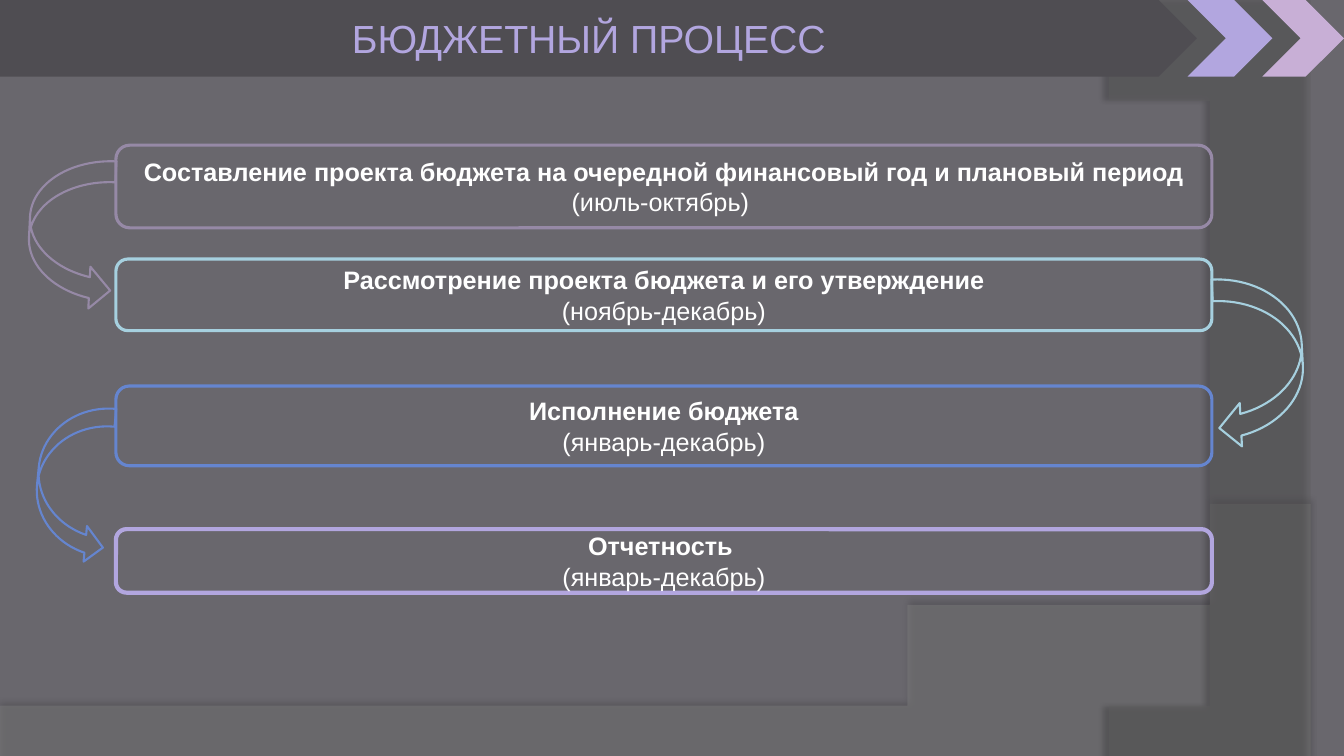
"""Build the budget process slide."""
from dataclasses import dataclass

from lxml import etree
from pptx import Presentation
from pptx import util as u
from pptx.dml.color import RGBColor
from pptx.enum import shapes, text
from pptx.oxml.ns import qn

MSO = shapes.MSO_SHAPE
Point = tuple[float, float]


@dataclass(frozen=True)
class Theme:
    font: str = "Arial"
    title_pt: float = 28
    body_pt: float = 18
    arrow_pt: float = 1.5
    white: str = "FFFFFF"
    background: str = "69676D"
    banner: str = "4F4D52"
    mauve: str = "9689A6"
    aqua: str = "A6D0DF"
    blue: str = "6585CF"
    lilac: str = "B2A6DF"
    pink: str = "C8AFD6"
    wave: str = "7F7F7F"
    edge: str = "5E5E5E"


@dataclass(frozen=True)
class Stage:
    top: float
    height: float
    color: str
    name: str
    months: str
    line_pt: float = 2.25


@dataclass(frozen=True)
class Shape:
    kind: MSO
    box: tuple[float, float, float, float]
    color: str
    rotation: float = 0


@dataclass(frozen=True)
class Backdrop:
    corners: tuple[Point, ...]
    curve: tuple[Point, Point, Point, Point]
    color: str
    opacity: int
    shadow_opacity: int
    shadow_pt: float
    shadow_angle: int


T = Theme()
W, H = 13.33, 7.5
STAGE_LEFT, STAGE_WIDTH = 1.15, 10.87
BANNER_HEIGHT = 0.76

BACKDROPS = (
    Backdrop(((0, H), (W, H)),
             ((W, 5.2), (7.45, 7.29), (5.21, 7.19), (0, 7.05)),
             T.wave, 45, 35, 3.5, 270),
    Backdrop(((W, 0), (W, H)),
             ((10.95, H), (12.46, 6.19), (13.57, 3), (10.67, 0)),
             T.edge, 40, 45, 4, 180),
)
STAGES = (
    Stage(1.44, 0.82, T.mauve,
          "Составление проекта бюджета на очередной финансовый год и плановый период",
          "(июль-октябрь) "),
    Stage(2.57, 0.71, T.aqua, "Рассмотрение проекта бюджета и его утверждение",
          "(ноябрь-декабрь)"),
    Stage(3.83, 0.79, T.blue, "Исполнение бюджета", "(январь-декабрь)"),
    Stage(5.25, 0.63, T.lilac, "Отчетность ", "(январь-декабрь)", 3),
)
ARROWS = (
    Shape(MSO.CURVED_RIGHT_ARROW, (0.29, 1.58, 0.83, 1.49), T.mauve, 2.8),
    Shape(MSO.CURVED_LEFT_ARROW, (12.06, 2.75, 0.86, 1.69), T.aqua, 357),
    Shape(MSO.CURVED_RIGHT_ARROW, (0.37, 4.02, 0.71, 1.56), T.blue, 5.5),
)
BANNER = (
    Shape(MSO.PENTAGON, (0, 0, 11.87, BANNER_HEIGHT), T.banner),
    Shape(MSO.CHEVRON, (11.78, 0, 0.84, BANNER_HEIGHT), T.lilac),
    Shape(MSO.CHEVRON, (12.52, 0, 0.81, BANNER_HEIGHT), T.pink),
)


def paint(sp, fill: str | None = None, line: str | None = None, line_pt: float = 1) -> None:
    sp.shadow.inherit = False
    if fill:
        sp.fill.solid()
        sp.fill.fore_color.rgb = RGBColor.from_string(fill)
    else:
        sp.fill.background()
    if line:
        sp.line.color.rgb = RGBColor.from_string(line)
        sp.line.width = u.Pt(line_pt)
    else:
        sp.line.fill.background()


def add_text(p, content: str, *, size: float = T.body_pt, color: str = T.white,
             bold: bool = False) -> None:
    p.alignment = text.PP_ALIGN.CENTER
    r = p.add_run()
    r.text = content
    r.font.name, r.font.size, r.font.bold = T.font, u.Pt(size), bold
    r.font.color.rgb = RGBColor.from_string(color)


def add_shape(s, item: Shape):
    sp = s.shapes.add_shape(item.kind, *map(u.Inches, item.box))
    sp.rotation = item.rotation
    return sp


def add_stage(s, stage: Stage) -> None:
    sp = add_shape(s, Shape(MSO.ROUNDED_RECTANGLE,
                            (STAGE_LEFT, stage.top, STAGE_WIDTH, stage.height), stage.color))
    paint(sp, line=stage.color, line_pt=stage.line_pt)
    tf = sp.text_frame
    tf.word_wrap = True
    tf.vertical_anchor = text.MSO_ANCHOR.MIDDLE
    add_text(tf.paragraphs[0], stage.name, bold=True)
    add_text(tf.add_paragraph(), stage.months)


def bezier(curve: tuple[Point, Point, Point, Point], steps: int = 60) -> list[Point]:
    points = []
    for i in range(steps + 1):
        t = i / steps
        weights = ((1 - t) ** 3, 3 * t * (1 - t) ** 2, 3 * t ** 2 * (1 - t), t ** 3)
        points.append((sum(k * c[0] for k, c in zip(weights, curve)),
                       sum(k * c[1] for k, c in zip(weights, curve))))
    return points


def add_alpha(color, percent: int) -> None:
    etree.SubElement(color, qn("a:alpha"), val=str(percent * 1000))


def add_backdrop(s, item: Backdrop) -> None:
    start, *rest = [*item.corners, *bezier(item.curve)]
    fb = s.shapes.build_freeform(*start, scale=u.Inches(1))
    fb.add_line_segments(rest, close=True)
    sp = fb.convert_to_shape()
    paint(sp, fill=item.color)
    props = sp._element.spPr
    add_alpha(props.find(qn("a:solidFill")).find(qn("a:srgbClr")), item.opacity)
    shadow = etree.SubElement(
        props.find(qn("a:effectLst")), qn("a:outerShdw"), blurRad=str(u.Pt(4)),
        dist=str(u.Pt(item.shadow_pt)), dir=str(item.shadow_angle * 60000))
    add_alpha(etree.SubElement(shadow, qn("a:srgbClr"), val="000000"), item.shadow_opacity)


def add_title(s, content: str) -> None:
    sp = s.shapes.title
    sp.left, sp.top = u.Inches(0), u.Inches(0)
    sp.width, sp.height = u.Inches(11.68), u.Inches(BANNER_HEIGHT)
    tf = sp.text_frame
    tf.word_wrap = True
    tf.auto_size = text.MSO_AUTO_SIZE.NONE
    tf.vertical_anchor = text.MSO_ANCHOR.MIDDLE
    add_text(tf.paragraphs[0], content, size=T.title_pt, color=T.lilac)
    s.shapes[-1]._element.addnext(sp._element)


def main() -> None:
    prs = Presentation()
    prs.slide_width, prs.slide_height = u.Inches(W), u.Inches(H)
    s = prs.slides.add_slide(prs.slide_layouts[5])
    s.background.fill.solid()
    s.background.fill.fore_color.rgb = RGBColor.from_string(T.background)
    for backdrop in BACKDROPS:
        add_backdrop(s, backdrop)
    for stage in STAGES:
        add_stage(s, stage)
    for arrow in ARROWS:
        paint(add_shape(s, arrow), line=arrow.color, line_pt=T.arrow_pt)
    for part in BANNER:
        paint(add_shape(s, part), fill=part.color)
    add_title(s, "БЮДЖЕТНЫЙ ПРОЦЕСС")
    prs.save("out.pptx")


if __name__ == "__main__":
    main()
